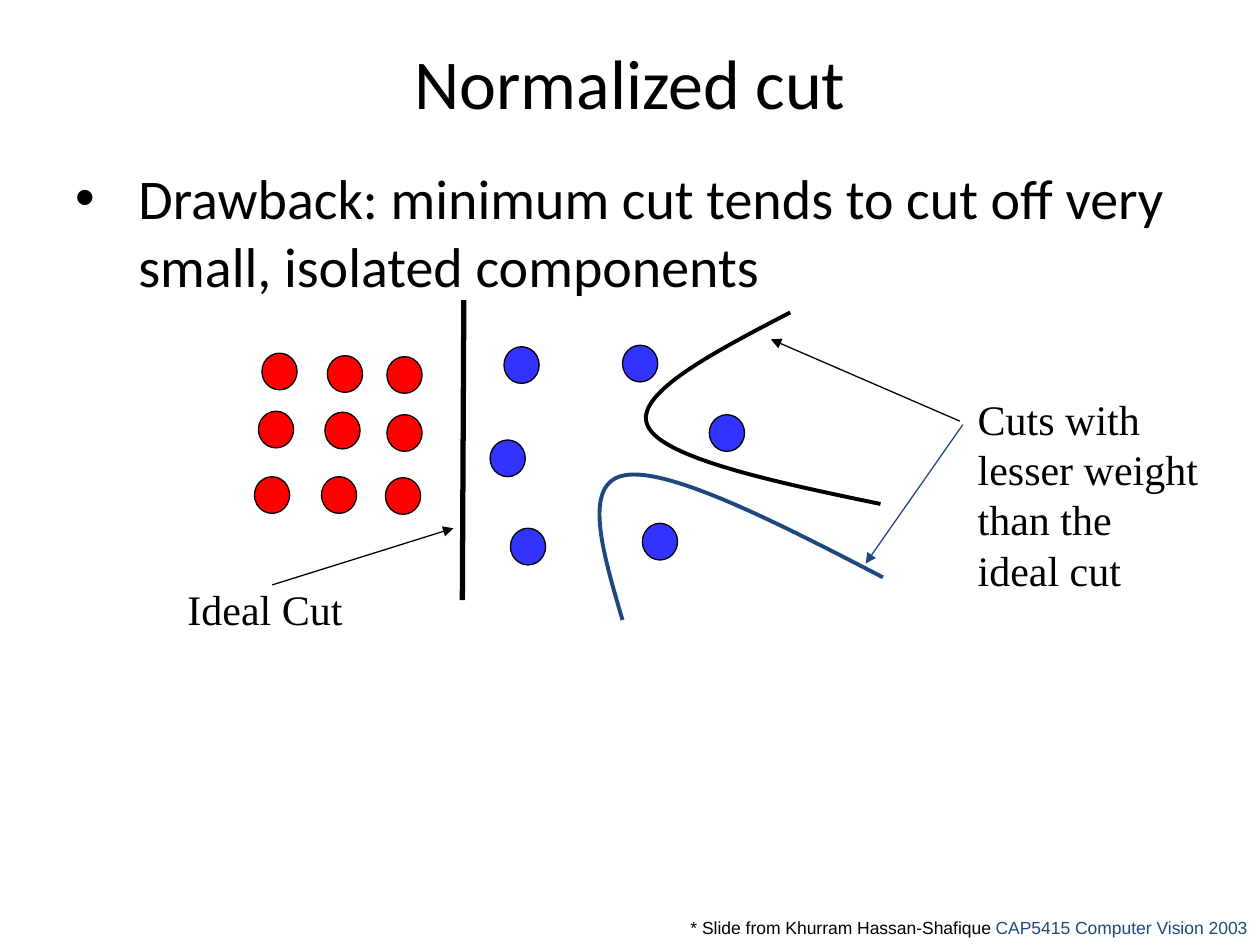
import lxml.etree
import pptx
import pptx.dml.color
import pptx.enum.shapes
import pptx.enum.text
import pptx.oxml.ns
import pptx.util

Cm = pptx.util.Cm
Pt = pptx.util.Pt
qn = pptx.oxml.ns.qn
RGBColor = pptx.dml.color.RGBColor
Align = pptx.enum.text.PP_ALIGN
Anchor = pptx.enum.text.MSO_ANCHOR

BLACK = RGBColor(0x00, 0x00, 0x00)
RED = RGBColor(0xFF, 0x00, 0x00)
BLUE = RGBColor(0x33, 0x33, 0xFF)
NAVY = RGBColor(0x1F, 0x49, 0x7D)

NODE_W, NODE_H = 0.71, 0.74

# Diagram positions in cm, from the diagram's top left corner
RED_NODES = [(1.75, 1.07), (3.07, 1.12), (4.27, 1.14),
             (1.68, 2.24), (3.02, 2.26), (4.27, 2.31),
             (1.6, 3.56), (2.95, 3.56), (4.24, 3.58)]
BLUE_NODES = [(6.63, 0.94), (9.02, 0.91), (6.35, 2.82),
              (10.77, 2.31), (6.76, 4.6), (9.42, 4.5)]
UPPER_CUT = [(12.4, 0.25), (10.82, 1.07), (9.22, 1.91), (9.53, 2.54),
             (9.83, 3.18), (12.04, 3.66), (14.22, 4.11)]
LOWER_CUT = [(14.27, 5.59), (12.12, 4.47), (9.96, 3.38), (9.07, 3.53),
             (8.2, 3.68), (8.61, 5.05), (9.02, 6.45)]


def add_text(s, box, paragraphs, font, size, wrap=True, align=Align.LEFT,
             anchor=Anchor.TOP):
    """Each paragraph is a list of (text, colour) runs."""
    sp = s.shapes.add_textbox(*map(Cm, box))
    tf = sp.text_frame
    tf.word_wrap = wrap
    tf.vertical_anchor = anchor
    for i, runs in enumerate(paragraphs):
        p = tf.paragraphs[0] if i == 0 else tf.add_paragraph()
        p.alignment = align
        for text, color in runs:
            r = p.add_run()
            r.text = text
            r.font.name = font
            r.font.size = Pt(size)
            r.font.color.rgb = color
    return sp


def add_node(s, x, y, color):
    sp = s.shapes.add_shape(pptx.enum.shapes.MSO_SHAPE.OVAL,
                            Cm(x), Cm(y), Cm(NODE_W), Cm(NODE_H))
    sp.shadow.inherit = False
    sp.fill.solid()
    sp.fill.fore_color.rgb = color
    sp.line.color.rgb = BLACK
    sp.line.width = Pt(0.75)


def add_line(s, start, end, color, width, arrow=False):
    sp = s.shapes.add_connector(pptx.enum.shapes.MSO_CONNECTOR.STRAIGHT,
                                *map(Cm, start + end))
    sp.line.color.rgb = color
    sp.line.width = Pt(width)
    if arrow:
        lxml.etree.SubElement(sp.line._get_or_add_ln(), qn("a:tailEnd"), type="triangle")
    lxml.etree.SubElement(sp._element.spPr, qn("a:effectLst"))


def add_curve(s, points, color):
    """Draw a Bézier path: a start point, then three points per segment."""
    pts = [(Cm(x), Cm(y)) for x, y in points]
    fb = s.shapes.build_freeform(*pts[0])
    fb.add_line_segments(pts[1:], close=False)
    sp = fb.convert_to_shape()
    sp.shadow.inherit = False
    sp.fill.background()
    sp.line.color.rgb = color
    sp.line.width = Pt(2.25)
    # Turn each three straight segments into one cubic curve
    geom = next(sp._element.iter(qn("a:pathLst")))[0]
    segments = geom.findall(qn("a:lnTo"))
    for i in range(0, len(segments), 3):
        curve = lxml.etree.SubElement(geom, qn("a:cubicBezTo"))
        for segment in segments[i:i + 3]:
            curve.append(segment[0])
            geom.remove(segment)


def add_title(s, box):
    add_text(s, box, [[("Normalized cut", BLACK)]], "Calibri", 40,
             align=Align.CENTER, anchor=Anchor.MIDDLE)


def add_body(s, box):
    sp = add_text(s, box, [[("Drawback: minimum cut tends to cut off very small, "
                             "isolated components", BLACK)]], "Calibri", 32)
    p = sp.text_frame.paragraphs[0]
    p.space_before = Pt(6.4)
    pPr = p._p.get_or_add_pPr()
    pPr.set("marL", str(Cm(1.27)))
    pPr.set("indent", str(-Cm(1.27)))
    lxml.etree.SubElement(pPr, qn("a:buFont"), typeface="Arial")
    lxml.etree.SubElement(pPr, qn("a:buChar"), char="•")


def add_diagram(s, left, top):
    def at(x, y):
        return left + x, top + y

    # Graph nodes
    for nodes, color in ((RED_NODES, RED), (BLUE_NODES, BLUE)):
        for node in nodes:
            add_node(s, *at(*node), color)

    # Cuts
    add_line(s, at(5.82, 0), at(5.79, 6.05), BLACK, 3)
    for points, color in ((UPPER_CUT, BLACK), (LOWER_CUT, NAVY)):
        add_curve(s, [at(*pt) for pt in points], color)

    # Labels and their arrows
    add_text(s, at(0, 5.59) + (3.63, 1.27), [[("Ideal Cut", BLACK)]],
             "Times New Roman", 24, wrap=False)
    lines = ["Cuts with", "lesser weight", "than the", "ideal cut"]
    add_text(s, at(15.93, 1.75) + (4.95, 4.32), [[(t, BLACK)] for t in lines],
             "Times New Roman", 24, wrap=False)
    for start, end, color in (((1.96, 5.74), (5.61, 4.6), BLACK),
                              ((15.82, 2.44), (12.01, 0.79), BLACK),
                              ((15.88, 2.51), (13.92, 5.31), NAVY)):
        add_line(s, at(*start), at(*end), color, 0.75, arrow=True)


def add_credit(s, box):
    add_text(s, box, [[("* Slide from Khurram Hassan-Shafique ", BLACK),
                       ("CAP5415 Computer Vision 2003", NAVY)]],
             "Arial", 10, wrap=False)


def main():
    prs = pptx.Presentation()
    prs.slide_width, prs.slide_height = Cm(25.4), Cm(19.05)
    s = prs.slides.add_slide(prs.slide_layouts[6])
    add_title(s, (1.27, 0.76, 22.86, 1.78))
    add_body(s, (1.27, 3.18, 22.86, 13.84))
    add_diagram(s, 3.53, 6.05)
    add_credit(s, (13.67, 18.36, 11.73, 0.69))
    prs.save("out.pptx")


if __name__ == "__main__":
    main()
